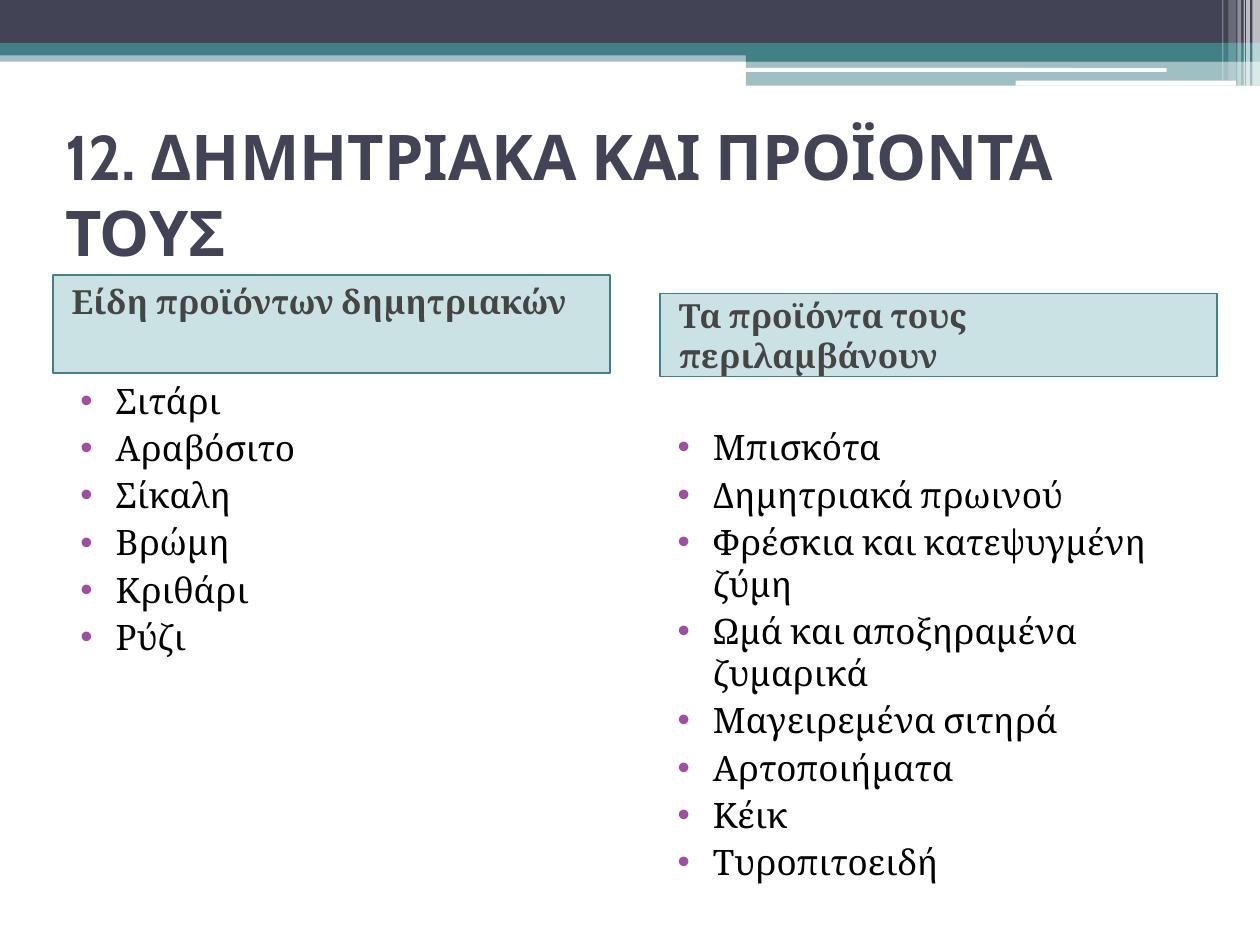
from lxml.etree import SubElement
from pptx import Presentation
from pptx.dml.color import RGBColor
from pptx.enum.shapes import MSO_SHAPE
from pptx.enum.text import MSO_ANCHOR, PP_ALIGN
from pptx.oxml.ns import qn
from pptx.util import Inches, Pt

NAVY, TEAL, WHITE = "424456", "438086", "FFFFFF"


def paint(fill, color, alpha=100):
    fill.solid()
    fill.fore_color.rgb = RGBColor.from_string(color)
    if alpha < 100:
        tint = fill._xPr.find(qn("a:solidFill"))[0]
        SubElement(tint, qn("a:alpha"), val=str(alpha * 1000))


def add_bar(slide, box, color, alpha=100, kind=MSO_SHAPE.RECTANGLE):
    bar = slide.shapes.add_shape(kind, *map(Inches, box))
    bar.shadow.inherit = False
    paint(bar.fill, color, alpha)
    bar.line.fill.background()
    return bar


def write(shape, lines, size, font, color, bold=False, anchor=MSO_ANCHOR.TOP,
          left=0, first=0, before=0, bullet=None):
    """Fill a shape with one paragraph per line; left and first are indents in inches."""
    frame = shape.text_frame
    frame.word_wrap = True
    frame.vertical_anchor = anchor
    frame.text = "\n".join(lines)
    for para in frame.paragraphs:
        para.alignment = PP_ALIGN.LEFT
        para.space_before = Pt(before)
        para.font.size, para.font.name, para.font.bold = Pt(size), font, bold
        paint(para.font.fill, color)
        props = para._p.get_or_add_pPr()
        props.set("marL", str(Inches(left)))
        props.set("indent", str(Inches(first)))
        if bullet:
            tint = SubElement(props, qn("a:buClr"))
            SubElement(tint, qn("a:srgbClr"), val=bullet)
            SubElement(props, qn("a:buFont"), typeface="Arial")
            SubElement(props, qn("a:buChar"), char="•")
            props.append(props.find(qn("a:defRPr")))  # must follow the bullet


def add_banner(slide, x, y, width):
    for top, height, color, alpha in [(0.4, 0.09, TEAL, 50), (0, 0.34, NAVY, 100),
                                      (0.34, 0.1, TEAL, 100)]:
        add_bar(slide, (x, y + top, width, height), color, alpha)
    for top, height, alpha in [(0.39, 0.1, 100), (0.48, 0.2, 50)]:
        add_bar(slide, (x + 5.92, y + top, width - 5.92, height), TEAL, alpha)
    for left, top, span, height in [(5.91, 0.54, 3.35, 0.03), (8.06, 0.64, 1.75, 0.04)]:
        add_bar(slide, (x + left, y + top, span, height), WHITE,
                kind=MSO_SHAPE.ROUNDED_RECTANGLE)
    for left, span, height, alpha in [
            (9.94, 0.06, 0.68, 65), (9.89, 0.03, 0.68, 65), (9.87, 0.01, 0.68, 60),
            (9.82, 0.03, 0.68, 40), (9.75, 0.06, 0.64, 20), (9.7, 0.01, 0.64, 30)]:
        add_bar(slide, (x + left, y, span, height), WHITE, alpha)


def add_title(slide, box, text):
    title = slide.shapes.add_textbox(*map(Inches, box))
    write(title, [text], 36, "Cabin", NAVY, True, MSO_ANCHOR.MIDDLE)


def add_header(slide, box, text, anchor):
    head = add_bar(slide, box, "328E97", 25)
    paint(head.line.fill, TEAL)
    head.line.width = Pt(1)
    write(head, [text], 19, "Cambria", "454545", True, anchor, left=0.05, before=3)


def add_list(slide, box, items):
    area = slide.shapes.add_textbox(*map(Inches, box))
    write(area, items, 20, "Cambria", "000000", left=0.4, first=-0.28,
          before=3, bullet="A04DA3")


def main():
    deck = Presentation()
    deck.slide_width, deck.slide_height = Inches(10), Inches(7.5)
    slide = deck.slides.add_slide(deck.slide_layouts[6])
    add_banner(slide, 0, 0, 10)
    add_title(slide, (0.42, 0.95, 9.17, 1.17), "12. ΔΗΜΗΤΡΙΑΚΑ ΚΑΙ ΠΡΟΪΟΝΤΑ ΤΟΥΣ")
    add_header(slide, (0.42, 2.18, 4.42, 0.78), "Είδη προϊόντων δημητριακών",
               MSO_ANCHOR.TOP)
    add_header(slide, (5.24, 2.33, 4.42, 0.66), "Τα προϊόντα τους περιλαμβάνουν",
               MSO_ANCHOR.MIDDLE)
    add_list(slide, (0.42, 2.96, 4.42, 4.25),
             ["Σιτάρι", "Αραβόσιτο", "Σίκαλη", "Βρώμη", "Κριθάρι", "Ρύζι"])
    add_list(slide, (5.16, 3.33, 4.42, 3.88),
             ["Μπισκότα", "Δημητριακά πρωινού", "Φρέσκια και κατεψυγμένη ζύμη",
              "Ωμά και αποξηραμένα ζυμαρικά", "Μαγειρεμένα σιτηρά",
              "Αρτοποιήματα", "Κέικ", "Τυροπιτοειδή"])
    deck.save("out.pptx")


if __name__ == "__main__":
    main()
